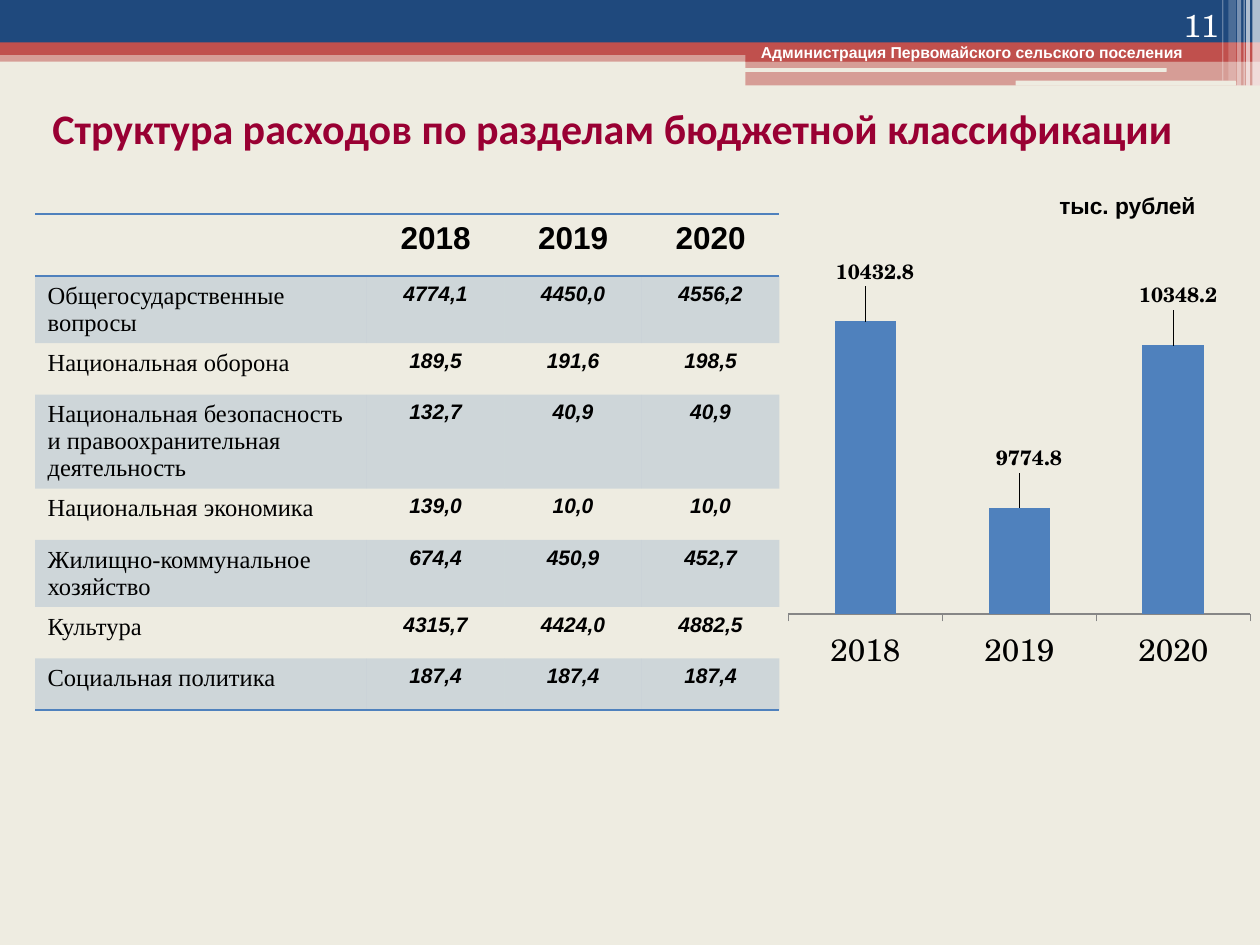
"""Build the budget expenditure slide with its table and column chart."""
from dataclasses import dataclass
from typing import Any, Optional

from lxml.etree import SubElement
from pptx import Presentation
from pptx.chart.data import CategoryChartData
from pptx.dml.color import RGBColor
from pptx.enum.chart import XL_CHART_TYPE, XL_LABEL_POSITION, XL_TICK_LABEL_POSITION, XL_TICK_MARK
from pptx.enum.shapes import MSO_SHAPE
from pptx.enum.text import MSO_ANCHOR, PP_ALIGN
from pptx.oxml import parse_xml
from pptx.oxml.ns import nsdecls, qn
from pptx.util import Pt

CREAM = RGBColor(0xEE, 0xEC, 0xE1)
NAVY = RGBColor(0x1F, 0x49, 0x7D)
RED = RGBColor(0xC0, 0x50, 0x4D)
BLUE = RGBColor(0x4F, 0x81, 0xBD)
CRIMSON = RGBColor(0x99, 0x00, 0x33)
GREY = RGBColor(0x86, 0x86, 0x86)
WHITE = RGBColor(0xFF, 0xFF, 0xFF)
BLACK = RGBColor(0x00, 0x00, 0x00)
SERIF = "TeX Gyre Schola"
NO_STYLE = "{2D5ABB26-0587-4C30-8999-92F81FD0307C}"


@dataclass
class Band:
    left: float
    top: float
    width: float
    height: float
    color: RGBColor
    alpha: int = 100
    kind: MSO_SHAPE = MSO_SHAPE.RECTANGLE


@dataclass
class Label:
    text: str
    left: float
    top: float
    width: float
    height: float
    font: dict
    align: PP_ALIGN = PP_ALIGN.LEFT
    anchor: MSO_ANCHOR = MSO_ANCHOR.TOP


BANDS = [
    Band(0, 28.8, 720, 6.5, RED, 50),
    Band(0, 0, 720, 24.5, NAVY),
    Band(0, 24.2, 720, 7.2, RED),
    Band(426, 28.1, 294, 7.2, RED),
    Band(426, 34.6, 294, 14.2, RED, 50),
    Band(425.5, 38.9, 241.2, 2.2, CREAM, kind=MSO_SHAPE.ROUNDED_RECTANGLE),
    Band(580.3, 46.1, 126, 2.9, CREAM, kind=MSO_SHAPE.ROUNDED_RECTANGLE),
    Band(715.7, 0, 4.3, 49, WHITE, 65),
    Band(712.1, 0, 2.2, 49, WHITE, 65),
    Band(710.6, 0, 0.7, 49, WHITE, 60),
    Band(707, 0, 2.2, 49, WHITE, 40),
    Band(702, 0, 4.3, 46.1, WHITE, 20),
    Band(698.4, 0, 0.7, 46.1, WHITE, 30),
]
TITLE = Label("Структура расходов по разделам бюджетной классификации", 0, 54.7, 700, 36,
              dict(name="Calibri", size=Pt(24), bold=True), PP_ALIGN.CENTER)
LABELS = [
    Label("Администрация Первомайского сельского поселения", 427.7, 20.9, 260.6, 18,
          dict(name="Arial", size=Pt(9), bold=True)),
    Label("11", 643.7, 0, 59.8, 28.8, dict(name=SERIF, size=Pt(18)),
          PP_ALIGN.RIGHT, MSO_ANCHOR.BOTTOM),
]
UNITS = Label("тыс. рублей", 598.3, 105.8, 108, 23, dict(name="Arial", size=Pt(13), bold=True))

YEARS = ["2018", "2019", "2020"]
ROWS = [
    ["", *YEARS],
    ["Общегосударственные вопросы", "4774,1", "4450,0", "4556,2"],
    ["Национальная оборона", "189,5", "191,6", "198,5"],
    ["Национальная безопасность и правоохранительная деятельность", "132,7", "40,9", "40,9"],
    ["Национальная экономика", "139,0", "10,0", "10,0"],
    ["Жилищно-коммунальное хозяйство", "674,4", "450,9", "452,7"],
    ["Культура", "4315,7", "4424,0", "4882,5"],
    ["Социальная политика", "187,4", "187,4", "187,4"],
]
ROW_HEIGHTS = [35.4, 38.3, 29.4, 53.7, 29.4, 38.3, 29.4, 29.4]
COL_WIDTHS = [189.6, 78.6, 78.6, 78.6]
HEAD_FONT = dict(name="Arial", size=Pt(18), bold=True)
NAME_FONT = dict(name="Times New Roman", size=Pt(14), bold=False)
VALUE_FONT = dict(name="Arial", size=Pt(12), bold=True, italic=True)
TOTALS = [10432.8, 9774.8, 10348.2]
LABEL_SHIFTS = [(0.02, -0.07), (0.02, -0.07), (0.01, -0.07)]


def apply(obj: Any, values: dict) -> None:
    for name, value in values.items():
        setattr(obj, name, value)


def paint(fill: Any, element: Any, color: RGBColor, alpha: int = 100) -> None:
    fill.solid()
    fill.fore_color.rgb = color
    if alpha < 100:
        SubElement(element.find(".//" + qn("a:srgbClr")), qn("a:alpha"), val=str(alpha * 1000))


def write(tf: Any, text: str, font: dict, color: RGBColor, align: PP_ALIGN) -> None:
    p = tf.paragraphs[0]
    p.alignment = align
    r = p.add_run()
    r.text = text
    apply(r.font, font)
    r.font.color.rgb = color


def add_band(slide: Any, band: Band) -> None:
    sp = slide.shapes.add_shape(band.kind, Pt(band.left), Pt(band.top), Pt(band.width), Pt(band.height))
    sp.shadow.inherit = False
    paint(sp.fill, sp._element.spPr, band.color, band.alpha)
    sp.line.fill.background()


def add_label(slide: Any, label: Label, color: RGBColor, sp: Optional[Any] = None) -> None:
    box = [Pt(v) for v in (label.left, label.top, label.width, label.height)]
    sp = sp or slide.shapes.add_textbox(*box)
    apply(sp, dict(zip(("left", "top", "width", "height"), box)))
    apply(sp.text_frame, dict(word_wrap=True, vertical_anchor=label.anchor))
    write(sp.text_frame, label.text, label.font, color, label.align)


def add_border(cell: Any, side: str) -> None:
    cell._tc.get_or_add_tcPr().insert(0, parse_xml(
        f'<a:{side} {nsdecls("a")} w="12700"><a:solidFill><a:srgbClr val="{BLUE}"/></a:solidFill></a:{side}>'))


def add_expenses(slide: Any) -> None:
    frame = slide.shapes.add_table(len(ROWS), len(COL_WIDTHS), Pt(20), Pt(122.4),
                                   Pt(sum(COL_WIDTHS)), Pt(sum(ROW_HEIGHTS)))
    table = frame.table
    table._tbl.tblPr.find(qn("a:tableStyleId")).text = NO_STYLE
    for col, width in zip(table.columns, COL_WIDTHS):
        col.width = Pt(width)
    for i, (row, height) in enumerate(zip(ROWS, ROW_HEIGHTS)):
        table.rows[i].height = Pt(height)
        for j, text in enumerate(row):
            cell = table.cell(i, j)
            if text:
                font = HEAD_FONT if i == 0 else VALUE_FONT if j else NAME_FONT
                write(cell.text_frame, text, font, BLACK, PP_ALIGN.CENTER if j else PP_ALIGN.LEFT)
            if i % 2:
                paint(cell.fill, cell._tc.tcPr, BLUE, 20)
            else:
                cell.fill.background()
            if i in (0, len(ROWS) - 1):
                add_border(cell, "lnB")
            if i == 0:
                add_border(cell, "lnT")


def add_totals(slide: Any) -> None:
    data = CategoryChartData(number_format="0.0")
    data.categories = YEARS
    data.add_series("Расходы", TOTALS)
    chart = slide.shapes.add_chart(XL_CHART_TYPE.COLUMN_CLUSTERED, Pt(445), Pt(145.4),
                                   Pt(275), Pt(244), data).chart
    apply(chart, dict(has_legend=False, has_title=False))
    apply(chart.font, dict(name=SERIF, size=Pt(18)))
    chart.font.color.rgb = BLACK
    apply(chart.value_axis, dict(minimum_scale=9400, maximum_scale=10600, visible=False,
                                 has_major_gridlines=False))
    apply(chart.category_axis, dict(major_tick_mark=XL_TICK_MARK.OUTSIDE,
                                    tick_label_position=XL_TICK_LABEL_POSITION.LOW))
    chart.category_axis.format.line.color.rgb = GREY
    plot = chart.plots[0]
    apply(plot, dict(gap_width=150, vary_by_categories=False))
    series = plot.series[0]
    paint(series.format.fill, series._element, BLUE)
    for i, (x, y) in enumerate(LABEL_SHIFTS):
        label = series.points[i].data_label
        label.position = XL_LABEL_POSITION.OUTSIDE_END
        apply(label.font, dict(name=SERIF, size=Pt(12), bold=True))
        label._dLbl.insert(1, layout(x=x, y=y))
    area = chart._chartSpace.chart.plotArea
    for old in area.findall(qn("c:layout")):
        area.remove(old)
    area.insert(0, layout(layoutTarget="inner", xMode="edge", yMode="edge", x=0.02, y=0.03, w=0.96, h=0.81))


def layout(**values: Any) -> Any:
    inner = "".join(f'<c:{k} val="{v}"/>' for k, v in values.items())
    return parse_xml(f'<c:layout {nsdecls("c")}><c:manualLayout>{inner}</c:manualLayout></c:layout>')


def main() -> None:
    prs = Presentation()
    apply(prs, dict(slide_width=Pt(720), slide_height=Pt(540)))
    slide = prs.slides.add_slide(prs.slide_layouts[5])
    paint(slide.background.fill, slide._element, CREAM)
    for band in BANDS:
        add_band(slide, band)
    add_expenses(slide)
    add_label(slide, TITLE, CRIMSON, slide.shapes.title)
    for label in LABELS:
        add_label(slide, label, WHITE)
    add_label(slide, UNITS, BLACK)
    add_totals(slide)
    prs.save("out.pptx")


if __name__ == "__main__":
    main()
